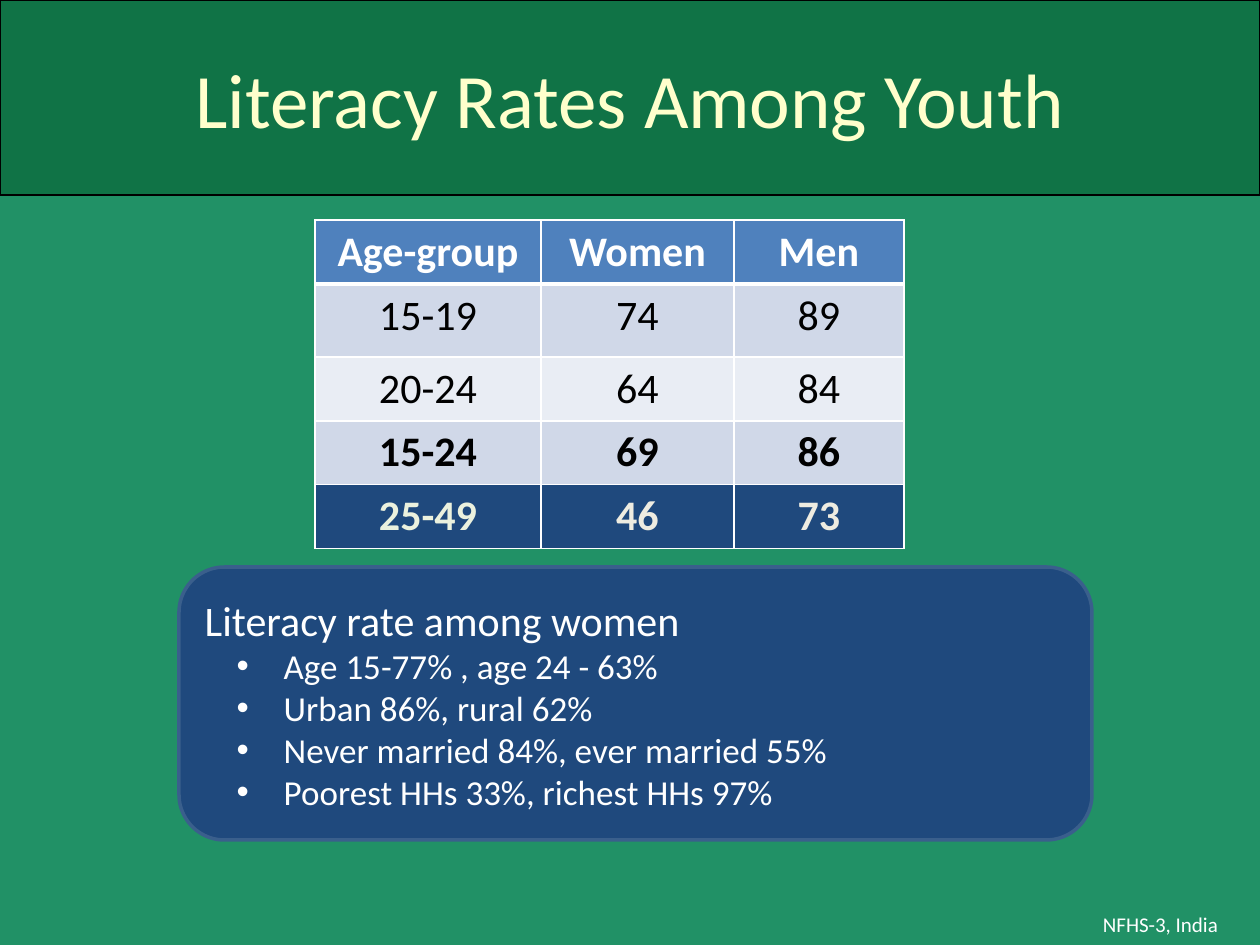
from dataclasses import dataclass

from lxml.etree import SubElement
from pptx import Presentation
from pptx.dml.color import RGBColor
from pptx.enum.shapes import MSO_SHAPE as Shape
from pptx.enum.text import MSO_ANCHOR as Anchor, MSO_AUTO_SIZE as AutoSize, PP_ALIGN as Align
from pptx.oxml.ns import qn
from pptx.util import Pt

EMU_PER_PX = 914400 / 126


@dataclass(frozen=True)
class Theme:
    font: str = "Calibri"
    background: str = "219166"
    banner: str = "005828"
    banner_opacity: int = 51
    title: str = "FFFFCC"
    white: str = "FFFFFF"
    black: str = "000000"
    header: str = "4F81BD"
    band_dark: str = "D0D8E8"
    band_light: str = "E9EDF4"
    navy: str = "1F497D"
    navy_line: str = "3A5F8C"
    total_label: str = "EBF1DE"
    total_value: str = "EEECE1"
    title_size: int = 44
    large_size: int = 24
    list_size: int = 20
    source_size: int = 12


THEME = Theme()


def px(value):
    return round(value * EMU_PER_PX)


def rgb(color):
    return RGBColor.from_string(color)


def fill_solid(fill, color):
    fill.solid()
    fill.fore_color.rgb = rgb(color)


def place(shape, left, top, width, height):
    shape.left, shape.top, shape.width, shape.height = map(px, (left, top, width, height))


def style_paragraph(paragraph, size, color, align=Align.CENTER, bold=False):
    paragraph.alignment = align
    font = paragraph.font
    font.name, font.size, font.bold = THEME.font, Pt(size), bold
    font.color.rgb = rgb(color)


def add_bullet(paragraph, margin, hanging):
    paragraph.level = 1
    properties = paragraph._p.get_or_add_pPr()
    properties.set("marL", str(px(margin)))
    properties.set("indent", str(-px(hanging)))
    bullet_font = properties.makeelement(qn("a:buFont"), {"typeface": "Arial"})
    bullet = properties.makeelement(qn("a:buChar"), {"char": "•"})
    properties.insert(0, bullet_font)
    properties.insert(1, bullet)


def add_title(slide, text):
    title = slide.shapes.title
    place(title, 0, 0, 1260, 195)
    fill_solid(title.fill, THEME.banner)
    color = title.fill._xPr.find(qn("a:solidFill"))[0]
    SubElement(color, qn("a:alpha"), val=str(THEME.banner_opacity * 1000))
    title.line.color.rgb = rgb(THEME.black)
    title.line.width = Pt(1)
    frame = title.text_frame
    frame.text = text
    frame.auto_size = AutoSize.NONE
    frame.vertical_anchor = Anchor.MIDDLE
    style_paragraph(frame.paragraphs[0], THEME.title_size, THEME.title)


def set_borders(cell, top, bottom):
    properties = cell._tc.get_or_add_tcPr()
    for side, width in (("lnL", 1), ("lnR", 1), ("lnT", top), ("lnB", bottom)):
        line = SubElement(properties, qn(f"a:{side}"), w=str(Pt(width)))
        solid = SubElement(line, qn("a:solidFill"))
        SubElement(solid, qn("a:srgbClr"), val=THEME.white)


def add_literacy_table(slide):
    rows = (
        (("Age-group", "Women", "Men"), THEME.header, THEME.white, THEME.white, True),
        (("15-19", "74", "89"), THEME.band_dark, THEME.black, THEME.black, False),
        (("20-24", "64", "84"), THEME.band_light, THEME.black, THEME.black, False),
        (("15-24", "69", "86"), THEME.band_dark, THEME.black, THEME.black, True),
        (("25-49", "46", "73"), THEME.navy, THEME.total_label, THEME.total_value, True),
    )
    widths = (226, 193, 170)
    heights = (55, 73, 55, 55, 55)
    table = slide.shapes.add_table(
        len(rows), len(widths), px(315), px(220), px(sum(widths)), px(325)
    ).table
    table.horz_banding = False
    for column, width in zip(table.columns, widths):
        column.width = px(width)
    for row, height in zip(table.rows, heights):
        row.height = px(height)
    for row_index, (texts, fill, label_color, value_color, bold) in enumerate(rows):
        for column_index, text in enumerate(texts):
            cell = table.cell(row_index, column_index)
            cell.text = text
            set_borders(cell, 3 if row_index == 1 else 1, 3 if row_index == 0 else 1)
            fill_solid(cell.fill, fill)
            color = value_color if column_index else label_color
            style_paragraph(cell.text_frame.paragraphs[0], THEME.large_size, color, bold=bold)


def add_box(slide, kind, bounds, fill, texts, line=None):
    box = slide.shapes.add_shape(kind, *map(px, bounds))
    box.shadow.inherit = False
    fill_solid(box.fill, fill)
    if line:
        box.line.color.rgb = rgb(line)
        box.line.width = Pt(2)
    else:
        box.line.fill.background()
    frame = box.text_frame
    frame.word_wrap = True
    frame.vertical_anchor = Anchor.MIDDLE
    frame.text = "\n".join(texts)
    return frame.paragraphs


def add_women_panel(slide):
    texts = (
        "Literacy rate among women",
        "Age 15-77% , age 24 - 63%",
        "Urban 86%, rural 62%",
        "Never married 84%, ever married 55%",
        "Poorest HHs 33%, richest HHs 97%",
    )
    heading, *items = add_box(
        slide, Shape.ROUNDED_RECTANGLE, (179, 567, 913, 273), THEME.navy, texts, THEME.navy_line
    )
    style_paragraph(heading, THEME.large_size, THEME.white, Align.JUSTIFY)
    for item in items:
        style_paragraph(item, THEME.list_size, THEME.white, Align.JUSTIFY)
        add_bullet(item, margin=79, hanging=47)


def add_source(slide, text):
    paragraphs = add_box(slide, Shape.RECTANGLE, (1061, 903, 199, 42), THEME.background, (text,))
    style_paragraph(paragraphs[0], THEME.source_size, THEME.white)


def main():
    presentation = Presentation()
    presentation.slide_width, presentation.slide_height = px(1260), px(945)
    slide = presentation.slides.add_slide(presentation.slide_layouts[5])
    fill_solid(slide.background.fill, THEME.background)
    add_title(slide, "Literacy Rates Among Youth")
    add_literacy_table(slide)
    add_women_panel(slide)
    add_source(slide, "NFHS-3, India")
    presentation.save("out.pptx")


if __name__ == "__main__":
    main()
